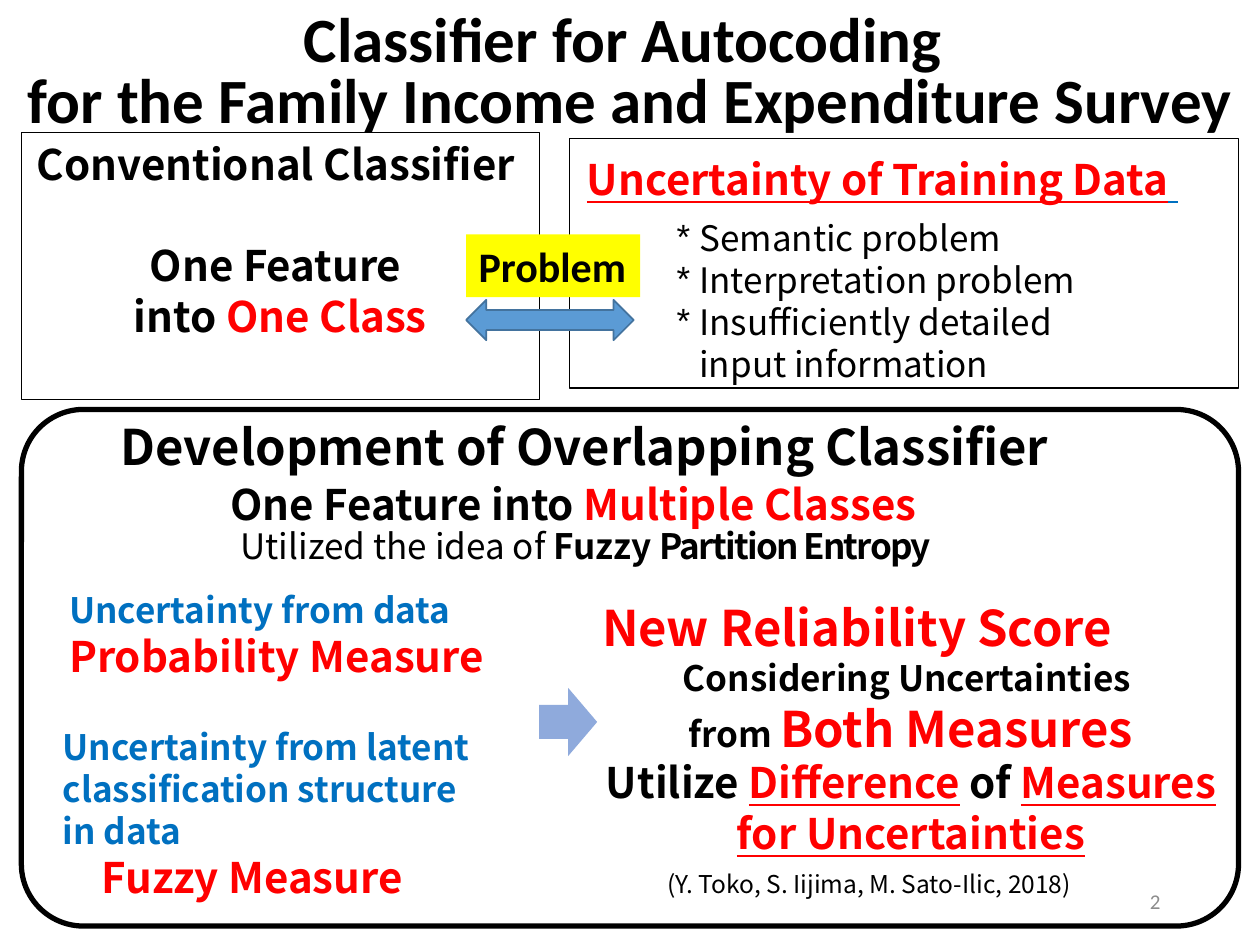
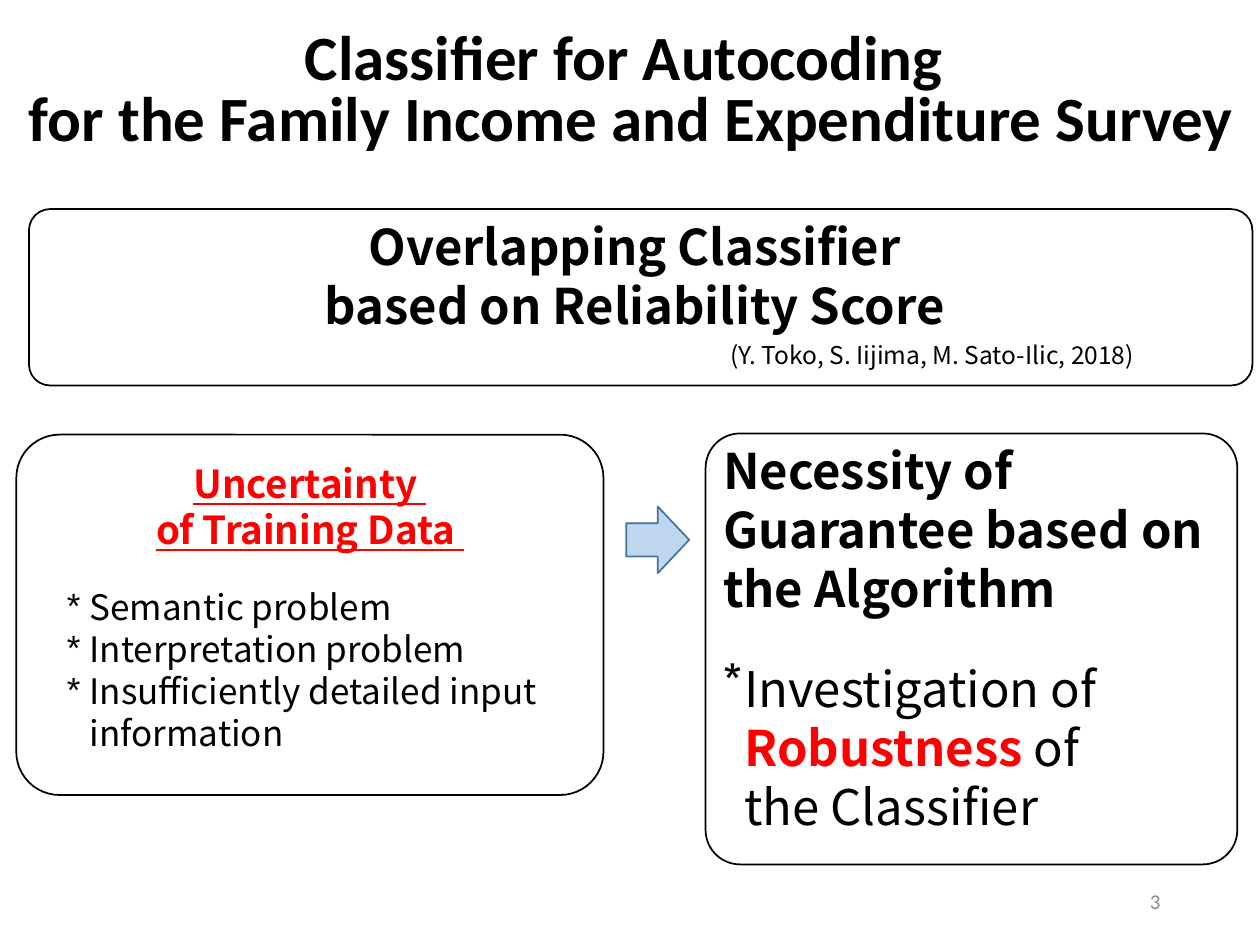
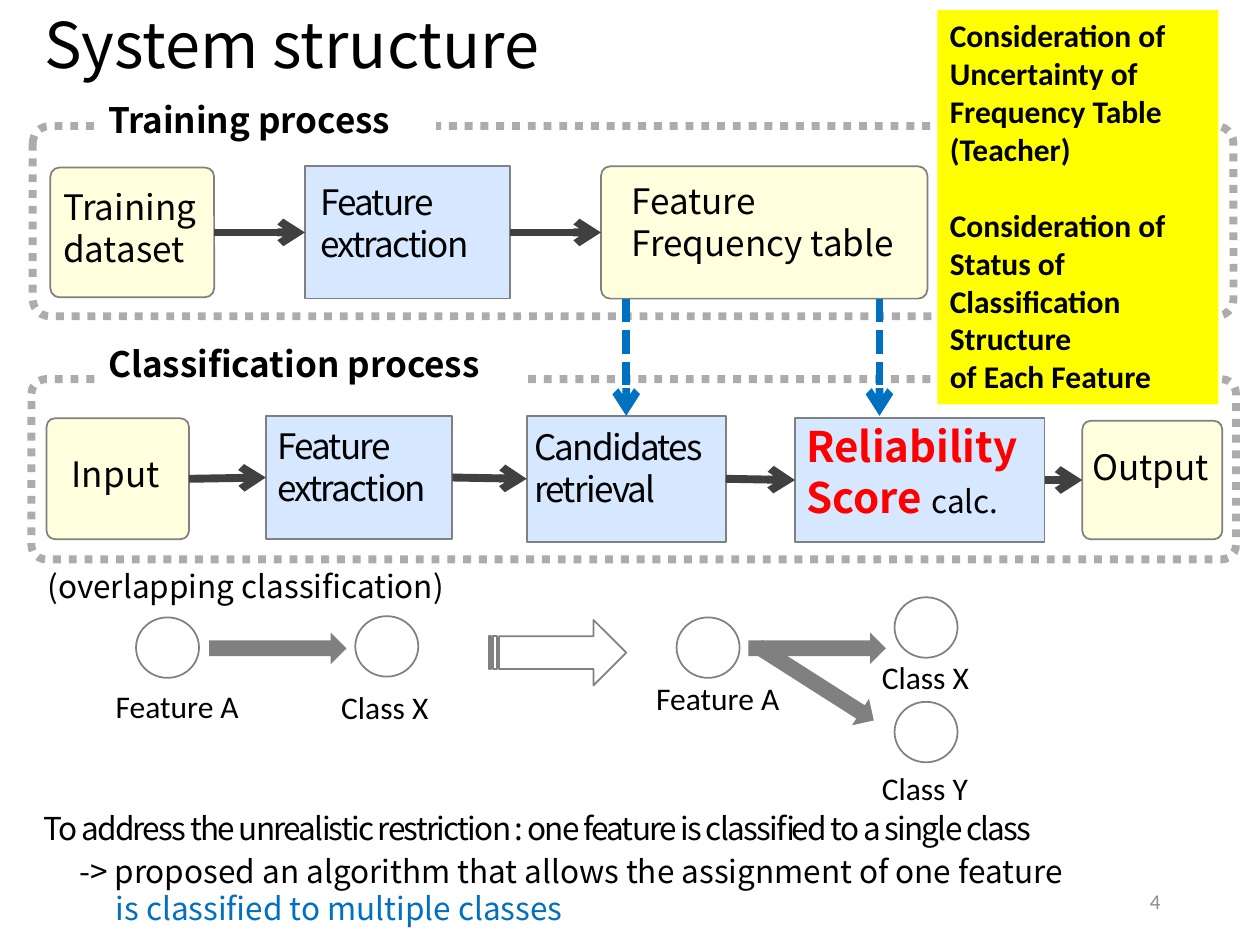
from lxml.etree import SubElement
from pptx import Presentation
from pptx.dml.color import RGBColor
from pptx.enum.dml import MSO_LINE
from pptx.enum.shapes import MSO_CONNECTOR, MSO_SHAPE as KIND
from pptx.enum.text import MSO_ANCHOR, MSO_AUTO_SIZE, PP_ALIGN as ALIGN
from pptx.oxml.ns import qn
from pptx.util import Pt

PX = 9144  # 100 px to the inch
BLACK, WHITE, GRAY = "000000", "FFFFFF", "808080"
RED, BLUE, YELLOW = "FF0000", "0070C0", "FFFF00"
DATA_FILL, STEP_FILL = "FFFFDD", "D5E8FF"
BODY = {"name": "Noto Sans CJK JP", "size": 20, "color": BLACK, "bold": False}
CALIBRI = {"name": "Calibri"}
HEADING = {"name": "Calibri", "size": 36, "bold": True}
IN_RED = {"color": RED}
RED_LINED = {"color": RED, "underline": True}
color = RGBColor.from_string


def add_box(slide, place, kind=None, fill=None, line=None, weight=1, corner=None):
    """Add a preset shape, or a text box when no kind is given."""
    lengths = [length * PX for length in place]
    if kind is None:
        return slide.shapes.add_textbox(*lengths)
    shape = slide.shapes.add_shape(kind, *lengths)
    shape.shadow.inherit = False
    shape.text_frame.vertical_anchor = MSO_ANCHOR.TOP
    for part, value in ((shape.fill, fill), (shape.line.fill, line)):
        if value:
            part.solid()
            part.fore_color.rgb = color(value)
        else:
            part.background()
    if line:
        shape.line.width = Pt(weight)
    if corner:
        shape.adjustments[0] = corner
    return shape


def write(shape, lines, align=ALIGN.LEFT, star_indent=None, **base):
    """Fill a shape with lines, each a string or a list of (text, changes)."""
    frame = shape.text_frame
    frame.word_wrap = True
    frame.auto_size = MSO_AUTO_SIZE.NONE
    for index, line in enumerate(lines):
        paragraph = frame.add_paragraph() if index else frame.paragraphs[0]
        paragraph.alignment = align
        paragraph.space_before = Pt(0)
        if star_indent:
            properties = paragraph._p.get_or_add_pPr()
            properties.set("marL", str(star_indent * PX))
            properties.set("indent", str(-star_indent * PX))
            SubElement(properties, qn("a:buChar"), char="*")
        for text, changes in [(line, {})] if isinstance(line, str) else line:
            style = {**BODY, **base, **changes}
            run = paragraph.add_run()
            run.text = text
            run.font.size = Pt(style.pop("size"))
            run.font.color.rgb = color(style.pop("color"))
            if style.pop("tight", False):
                run._r.get_or_add_rPr().set("spc", "-100")
            for key, value in style.items():
                setattr(run.font, key, value)
    return frame.paragraphs


presentation = Presentation()
presentation.slide_width, presentation.slide_height = 1000 * PX, 750 * PX
content_layout, title_layout = (presentation.slide_layouts[i] for i in (1, 5))

# Titles, problem lists and slide numbers
survey_title = ["Classifier for Autocoding ",
                "for the Family Income and Expenditure Survey"]
survey_format = {"align": ALIGN.CENTER, **HEADING}
problems = ["Semantic problem", "Interpretation problem",
            "Insufficiently detailed input information"]
pages = [
    (content_layout, (0, 6, 1000, 108), survey_title, survey_format,
     Pt(35), MSO_ANCHOR.TOP, (527, 167, 381, 145)),
    (content_layout, (2, 20, 998, 108), survey_title, survey_format,
     Pt(35), MSO_ANCHOR.TOP, (43, 460, 415, 232)),
    (title_layout, (25, 4, 963, 68), ["System structure"], {"size": 36},
     0.9, MSO_ANCHOR.MIDDLE, None),
]
for number, page in enumerate(pages, 2):
    layout, place, lines, title_format, spacing, anchor, list_place = page
    slide = presentation.slides.add_slide(layout)
    placed = [(slide.shapes.title, place)]
    if list_place:
        placed.append((slide.placeholders[1], list_place))
        write(slide.placeholders[1], problems, star_indent=18)
    for holder, spot in placed:
        holder.left, holder.top, holder.width, holder.height = [
            length * PX for length in spot]
    for paragraph in write(slide.shapes.title, lines, **title_format):
        paragraph.line_spacing = spacing
    slide.shapes.title.text_frame.vertical_anchor = anchor
    number_box = add_box(slide, (706, 695, 225, 40))
    number_box.text_frame.vertical_anchor = MSO_ANCHOR.MIDDLE
    write(number_box, [str(number)], ALIGN.RIGHT, name="Calibri", size=12,
          color="8C8C8C")
overview, necessity, system = presentation.slides
citation = ["(Y. Toko, S. Iijima, M. Sato-Ilic, 2018)"]

# Overview: conventional and overlapping classifier
write(add_box(overview, (456, 117, 533, 50)),
      [[("Uncertainty of Training Data", RED_LINED),
        (" ", {"color": BLUE, "underline": True})]], size=24, bold=True)
write(add_box(overview, (86, 326, 858, 58)),
      ["Development of Overlapping Classifier"], size=28, bold=True)
write(add_box(overview, (173, 375, 616, 50)),
      [[("One Feature into ", {}), ("Multiple Classes", IN_RED)]],
      size=24, bold=True)
write(add_box(overview, (520, 685, 388, 34)), citation, size=14)
write(add_box(overview, (181, 411, 616, 44)),
      [[("Utilized the idea of ", {}), ("Fuzzy ", {"bold": True}),
        ("Partition Entropy", {"bold": True, "tight": True})]])
score = write(add_box(overview, (468, 469, 510, 219)), [
    [("New Reliability Score", {"size": 28, "color": RED})],
    "Considering Uncertainties ",
    [("from ", {}), ("Both Measures", {"size": 28, "color": RED})],
    [("Utilize ", {"size": 24}), ("Difference", {"size": 24, **RED_LINED}),
     (" of ", {"size": 24}),
     ("Measures for Uncertainties", {"size": 24, **RED_LINED})],
], ALIGN.CENTER, bold=True)
score[0].alignment = ALIGN.LEFT
write(add_box(overview, (45, 462, 421, 84)),
      ["Uncertainty from data",
       [("Probability Measure", {"size": 24, "color": RED})]],
      color=BLUE, bold=True)
latent = write(add_box(overview, (40, 571, 380, 151)),
               ["Uncertainty from latent classification structure", "in data",
                [("Fuzzy Measure", {"size": 24, "color": RED})]],
               color=BLUE, bold=True)
latent[2]._p.get_or_add_pPr().set("marL", str(31 * PX))
add_box(overview, (424, 550, 54, 46), KIND.DOWN_ARROW, "8FAADC").rotation = 270
conventional = write(
    add_box(overview, (17, 105, 411, 212), KIND.RECTANGLE, None, BLACK, 0.75),
    ["Conventional Classifier ", "One Feature ",
     [("into ", {}), ("One Class", IN_RED)]],
    ALIGN.CENTER, size=24, bold=True)
conventional[1].space_before = Pt(29)
add_box(overview, (452, 110, 531, 198), KIND.RECTANGLE, None, BLACK)
add_box(overview, (370, 238, 133, 32), KIND.LEFT_RIGHT_ARROW, "5B9BD5", "43739E")
write(add_box(overview, (370, 186, 138, 50), KIND.RECTANGLE, YELLOW),
      ["Problem"], name="Calibri", size=24, bold=True)
add_box(overview, (17, 325, 966, 410), KIND.ROUNDED_RECTANGLE, None, BLACK, 3, 0.12)

# Necessity of a guarantee
for place, corner in (((23, 166, 971, 140), 0.12), ((13, 345, 466, 286), 0.12),
                      ((560, 344, 422, 342), 0.08)):
    add_box(necessity, place, KIND.ROUNDED_RECTANGLE, None, BLACK, 1, corner)
write(add_box(necessity, (204, 167, 608, 104)),
      ["Overlapping Classifier ", "based on Reliability Score "],
      ALIGN.CENTER, size=28, bold=True)
write(add_box(necessity, (570, 265, 423, 34)), citation, size=14)
add_box(necessity, (497, 402, 50, 53), KIND.RIGHT_ARROW, "BDD7EE", "43739E")
write(add_box(necessity, (103, 360, 286, 84)),
      ["Uncertainty ", "of Training Data "],
      ALIGN.CENTER, size=22, bold=True, **RED_LINED)
write(add_box(necessity, (564, 345, 417, 160)),
      ["Necessity of Guarantee based on the Algorithm"], size=28, bold=True)
write(add_box(necessity, (564, 518, 347, 153)),
      [[("Investigation of ", {}), ("Robustness", {"color": RED, "bold": True}),
        (" of the Classifier", {})]], star_indent=17, size=28)

# System structure: process boxes with the left and top margin of their text
data_box = (KIND.ROUNDED_RECTANGLE, DATA_FILL, GRAY, 1, 0.07)
step_box = (KIND.RECTANGLE, STEP_FILL, GRAY)
extraction = ["Feature", "extraction"]
tight = {"tight": True}
rows = [
    [((40, 133, 130, 103), data_box, (8, 12), ["Training", "dataset"], {}),
     ((242, 132, 163, 105), step_box, (12, 11), extraction, tight),
     ((477, 132, 259, 105), data_box, (22, 8), ["Feature", "Frequency table"], {})],
    [((37, 332, 113, 96), data_box, (18, 25), ["Input"], {}),
     ((211, 330, 148, 98), step_box, (9, 7), extraction, tight),
     ((418, 330, 158, 100), step_box, (6, 8), ["Candidates", "retrieval"], tight),
     ((631, 332, 198, 98), step_box, (9, 2),
      [[("Reliability Score ", {"size": 24, "color": RED, "bold": True}),
        ("calc.", {"size": 18})]], {}),
     ((859, 334, 111, 94), data_box, (6, 18), ["Output"], {})],
]
processes = []
for row in rows:
    boxes = []
    for place, look, (left, top), lines, changes in row:
        box = add_box(system, place, *look)
        frame = box.text_frame
        frame.margin_left, frame.margin_top, frame.margin_right = left * PX, top * PX, 0
        write(box, lines, **changes)
        boxes.append(box)
    processes.append(boxes)

for frame_place, corner, label_place, label in (
        ((26, 100, 953, 151), 0.09, (76, 73, 270, 56), "Training process"),
        ((25, 301, 956, 143), 0.08, (76, 267, 341, 59), "Classification process")):
    outline = add_box(system, frame_place, KIND.ROUNDED_RECTANGLE, None, "AFABAB",
                      4.5, corner)
    outline.line.dash_style = MSO_LINE.ROUND_DOT
    write(add_box(system, label_place, KIND.RECTANGLE, WHITE), [label], bold=True)

links = []
for boxes in processes:
    for source, target in zip(boxes, boxes[1:]):
        connector = system.shapes.add_connector(MSO_CONNECTOR.STRAIGHT, 0, 0, 0, 0)
        connector.begin_connect(source, 3)
        connector.end_connect(target, 1)
        links.append((connector, "404040", None))
for x in (497, 698):
    connector = system.shapes.add_connector(
        MSO_CONNECTOR.STRAIGHT, x * PX, 237 * PX, x * PX, 330 * PX)
    links.append((connector, BLUE, MSO_LINE.SQUARE_DOT))
candidates = processes[1][2]
links[-2][0].end_connect(candidates, 0)
for connector, link_color, dash in links:
    connector.line.color.rgb = color(link_color)
    connector.line.width = Pt(4.5)
    if dash:
        connector.line.dash_style = dash
    properties = connector._element.spPr
    SubElement(properties.find(qn("a:ln")), qn("a:tailEnd"), type="arrow")
    SubElement(properties, qn("a:effectLst"))

# System structure: from one class to overlapping classes
for left, top in ((108, 490), (282, 489), (537, 490), (710, 474), (710, 557)):
    add_box(system, (left, top, 50, 48), KIND.FLOWCHART_CONNECTOR, None, GRAY)
for left, top, angle in ((166, 502, 0), (594, 502, 0), (593, 530, 32.5)):
    add_box(system, (left, top, 109, 25), KIND.RIGHT_ARROW, GRAY).rotation = angle
add_box(system, (388, 492, 109, 52), KIND.STRIPED_RIGHT_ARROW, WHITE, GRAY)
for left, top, label in ((82, 540, "Feature A"), (261, 541, "Class X"),
                         (511, 534, "Feature A"), (690, 517, "Class X"),
                         (690, 605, "Class Y")):
    write(add_box(system, (left, top, 128, 39)), [label], size=18, **CALIBRI)
write(add_box(system, (28, 445, 355, 39)), ["(overlapping classification)"], size=18)
write(add_box(system, (25, 637, 950, 40)),
      ["To address the unrealistic restriction : one feature is classified"
       " to a single class"], size=18, tight=True)
proposal = write(
    add_box(system, (53, 671, 887, 69)),
    ["-> proposed an algorithm that allows the assignment of one feature",
     [("is classified to multiple classes", {"color": BLUE})]], size=18)
proposal[1]._p.get_or_add_pPr().set("marL", str(29 * PX))
considerations = write(
    add_box(system, (744, 8, 223, 313), KIND.RECTANGLE, YELLOW),
    ["Consideration of", "Uncertainty of", "Frequency Table", "(Teacher)",
     "Consideration of", "Status of", "Classification Structure",
     "of Each Feature"], size=18, bold=True, **CALIBRI)
considerations[4].space_before = Pt(22)

presentation.save("out.pptx")
